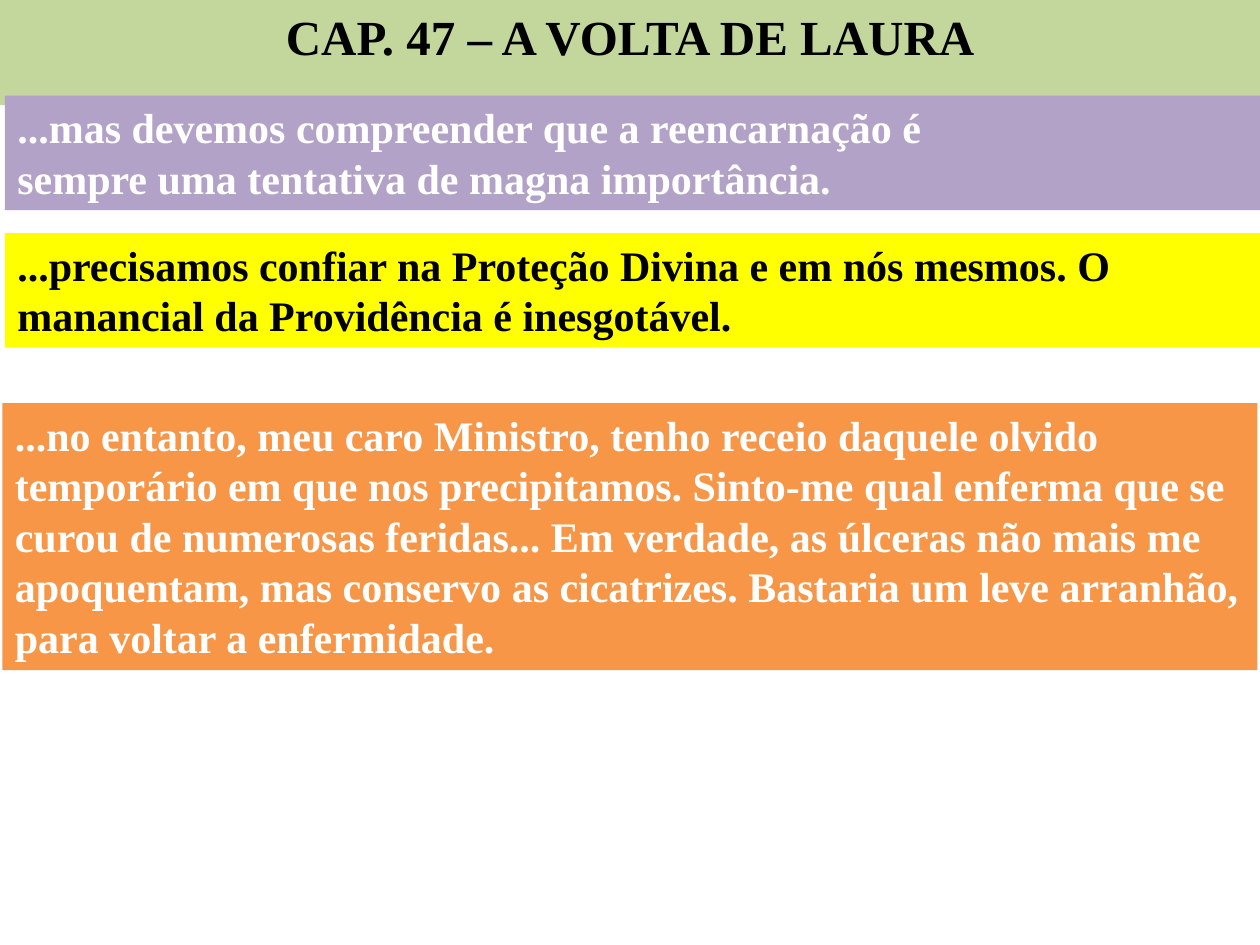
from pptx import Presentation
from pptx.dml.color import RGBColor
from pptx.enum.text import MSO_ANCHOR, MSO_AUTO_SIZE, PP_ALIGN
from pptx.util import Cm, Pt

TOP = MSO_ANCHOR.TOP
GROW = MSO_AUTO_SIZE.SHAPE_TO_FIT_TEXT
LEFT, MID = PP_ALIGN.LEFT, PP_ALIGN.CENTER

BLACK = RGBColor(0x00, 0x00, 0x00)
WHITE = RGBColor(0xFF, 0xFF, 0xFF)
GREEN = RGBColor(0xC3, 0xD6, 0x9B)
MAUVE = RGBColor(0xB3, 0xA2, 0xC7)
YELLOW = RGBColor(0xFF, 0xFF, 0x00)
ORANGE = RGBColor(0xF7, 0x96, 0x46)

WIDE = 25.3
FRAME = {"word_wrap": True, "auto_size": GROW, "vertical_anchor": TOP}
FONT = {"name": "Times New Roman", "bold": True}


def fill_box(box, text, back, ink, size, align):
    """Give a box its colour and its text, one paragraph per line."""
    box.fill.solid()
    box.fill.fore_color.rgb = back
    frame = box.text_frame
    frame.text = text
    for key, value in FRAME.items():
        setattr(frame, key, value)
    for para in frame.paragraphs:
        para.alignment = align
        for run in para.runs:
            for key, value in FONT.items():
                setattr(run.font, key, value)
            run.font.size = Pt(size)
            run.font.color.rgb = ink


deck = Presentation()
deck.slide_width, deck.slide_height = Cm(25.4), Cm(19.05)
slide = deck.slides.add_slide(deck.slide_layouts[5])

title = slide.shapes.title
title.left, title.top = Cm(0), Cm(0)
title.width, title.height = deck.slide_width, Cm(1.45)
fill_box(title, "CAP. 47 – A VOLTA DE LAURA", GREEN, BLACK, 28, MID)

quotes = [
    (0.1, 1.93, 2.31, MAUVE, WHITE,
     "...mas devemos compreender que a reencarnação é\n"
     "sempre uma tentativa de magna importância."),
    (0.1, 4.7, 2.31, YELLOW, BLACK,
     "...precisamos confiar na Proteção Divina e em nós mesmos. O\n"
     "manancial da Providência é inesgotável."),
    (0.05, 8.13, 5.38, ORANGE, WHITE,
     "...no entanto, meu caro Ministro, tenho receio daquele olvido "
     "temporário em que nos precipitamos. Sinto-me qual enferma que se "
     "curou de numerosas feridas... Em verdade, as úlceras não mais me "
     "apoquentam, mas conservo as cicatrizes. Bastaria um leve arranhão, "
     "para voltar a enfermidade."),
]
for left, top, height, back, ink, text in quotes:
    box = slide.shapes.add_textbox(Cm(left), Cm(top), Cm(WIDE), Cm(height))
    fill_box(box, text, back, ink, 24, LEFT)

deck.save("out.pptx")
